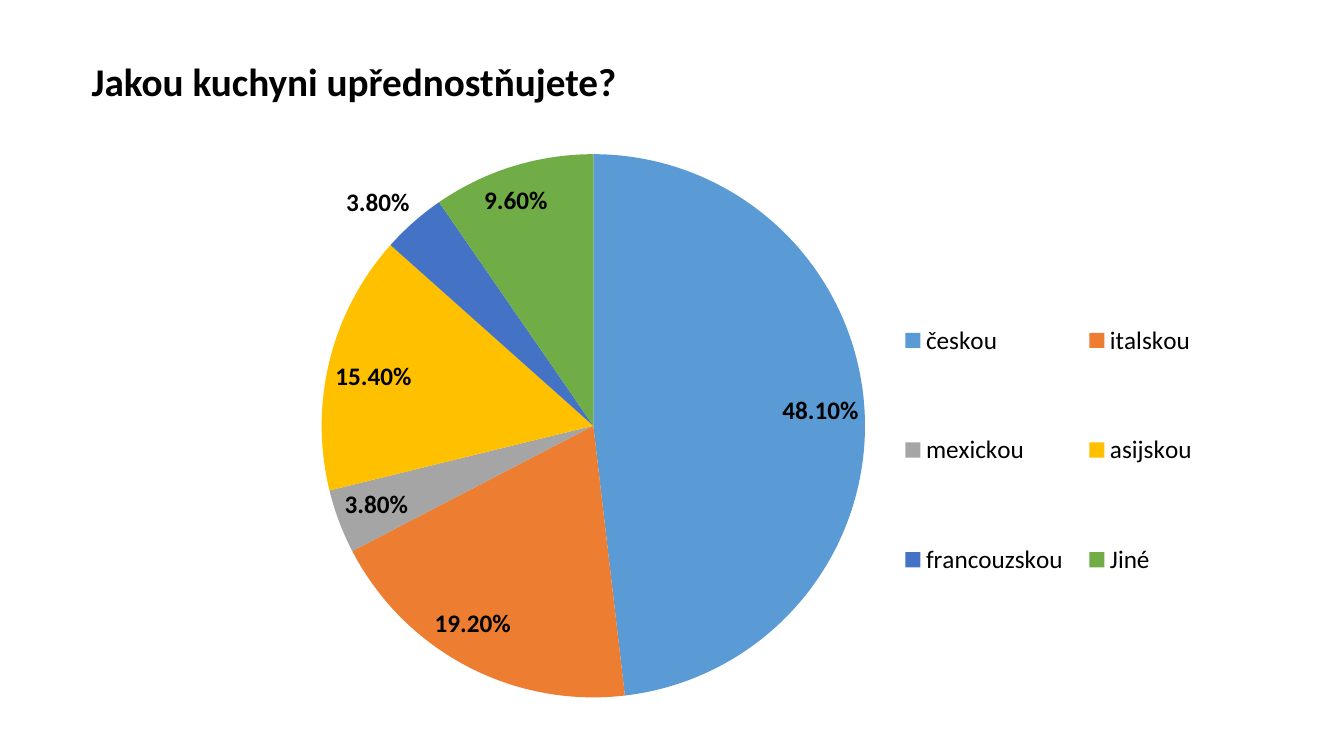
import pptx
import pptx.chart.data
import pptx.dml.color
import pptx.enum.chart
import pptx.enum.text
import pptx.oxml
import pptx.oxml.ns
import pptx.util
from pptx.util import Inches

QUESTION = "Jakou kuchyni upřednostňujete?"
COLORS = {
    "text": "000000",
    "českou": "5B9BD5",
    "italskou": "ED7D31",
    "mexickou": "A5A5A5",
    "asijskou": "FFC000",
    "francouzskou": "4472C4",
    "Jiné": "70AD47",
}
SHARES = {
    "českou": 0.481,
    "italskou": 0.192,
    "mexickou": 0.038,
    "asijskou": 0.154,
    "francouzskou": 0.038,
    "Jiné": 0.096,
}
CHART_BOX = (0.29, 1.09, 12.39, 5.96)
PIE_BOX = (3.19, 1.53, 5.39, 5.39)
LEGEND_BOX = (8.8, 2.44, 3.2, 4.05)
LABEL_SHIFTS = {"italskou": (-0.34, -0.22), "Jiné": (-0.3, 0.13)}


def style_font(font, size, bold=False):
    font.name = "Calibri"
    font.size = pptx.util.Pt(size)
    font.bold = bold
    font.color.rgb = pptx.dml.color.RGBColor.from_string(COLORS["text"])


def set_layout(element, index, settings):
    """Give a chart part a manual layout from (tag, value) pairs."""
    for old in element.findall(pptx.oxml.ns.qn("c:layout")):
        element.remove(old)
    entries = "".join(f'<c:{tag} val="{value}"/>' for tag, value in settings)
    element.insert(index, pptx.oxml.parse_xml(
        f'<c:layout {pptx.oxml.ns.nsdecls("c")}>'
        f'<c:manualLayout>{entries}</c:manualLayout></c:layout>'))


deck = pptx.Presentation()
deck.slide_width, deck.slide_height = Inches(13.33), Inches(7.5)
page = deck.slides.add_slide(deck.slide_layouts[5])

# Question
title = page.shapes.title
title.left, title.top = Inches(0.78), Inches(0.52)
title.width, title.height = Inches(5.46), Inches(0.57)
title.text_frame.text = QUESTION
title.text_frame.word_wrap = False
title.text_frame.auto_size = pptx.enum.text.MSO_AUTO_SIZE.SHAPE_TO_FIT_TEXT
heading = title.text_frame.paragraphs[0]
heading.alignment = pptx.enum.text.PP_ALIGN.CENTER
style_font(heading.font, 28, True)

# Pie of answers
data = pptx.chart.data.CategoryChartData(number_format="0.00%")
data.categories = list(SHARES)
data.add_series(QUESTION, list(SHARES.values()))
chart = page.shapes.add_chart(
    pptx.enum.chart.XL_CHART_TYPE.PIE, *map(Inches, CHART_BOX), data).chart
chart.has_title = False
style_font(chart.font, 10)
plot = chart.plots[0]
plot.vary_by_categories = True

series = plot.series[0]
labels = series.data_labels
labels.show_value = True
labels.show_percentage = False
labels.number_format = "0.00%"
labels.number_format_is_linked = False
labels.position = pptx.enum.chart.XL_LABEL_POSITION.INSIDE_END
style_font(labels.font, 18, True)
for leader_lines in labels._element.findall(pptx.oxml.ns.qn("c:showLeaderLines")):
    leader_lines.set("val", "0")

chart_left, chart_top, chart_width, chart_height = CHART_BOX
for number, cuisine in enumerate(SHARES):
    point = series.points[number]
    point.format.fill.solid()
    point.format.fill.fore_color.rgb = pptx.dml.color.RGBColor.from_string(
        COLORS[cuisine])
    if cuisine == "francouzskou":
        style_font(point.data_label.font, 18, True)
        point.data_label.position = pptx.enum.chart.XL_LABEL_POSITION.OUTSIDE_END
    elif cuisine in LABEL_SHIFTS:
        style_font(point.data_label.font, 18, True)
        point.data_label.position = pptx.enum.chart.XL_LABEL_POSITION.INSIDE_END
        across, down = LABEL_SHIFTS[cuisine]
        label = labels._element.xpath(f'c:dLbl[c:idx/@val="{number}"]')[0]
        set_layout(label, 1, [("x", across / chart_width),
                              ("y", down / chart_height)])

# Legend in two columns
chart.has_legend = True
legend = chart.legend
legend.position = pptx.enum.chart.XL_LEGEND_POSITION.RIGHT
legend.include_in_layout = False
style_font(legend.font, 18)

# Places of the pie and the legend inside the chart
for element, index, box, target in (
    (chart._chartSpace.chart.plotArea, 0, PIE_BOX, [("layoutTarget", "inner")]),
    (legend._element, 1, LEGEND_BOX, []),
):
    left, top, width, height = box
    set_layout(element, index, target + [
        ("xMode", "edge"), ("yMode", "edge"),
        ("x", (left - chart_left) / chart_width),
        ("y", (top - chart_top) / chart_height),
        ("w", width / chart_width), ("h", height / chart_height)])

deck.save("out.pptx")
